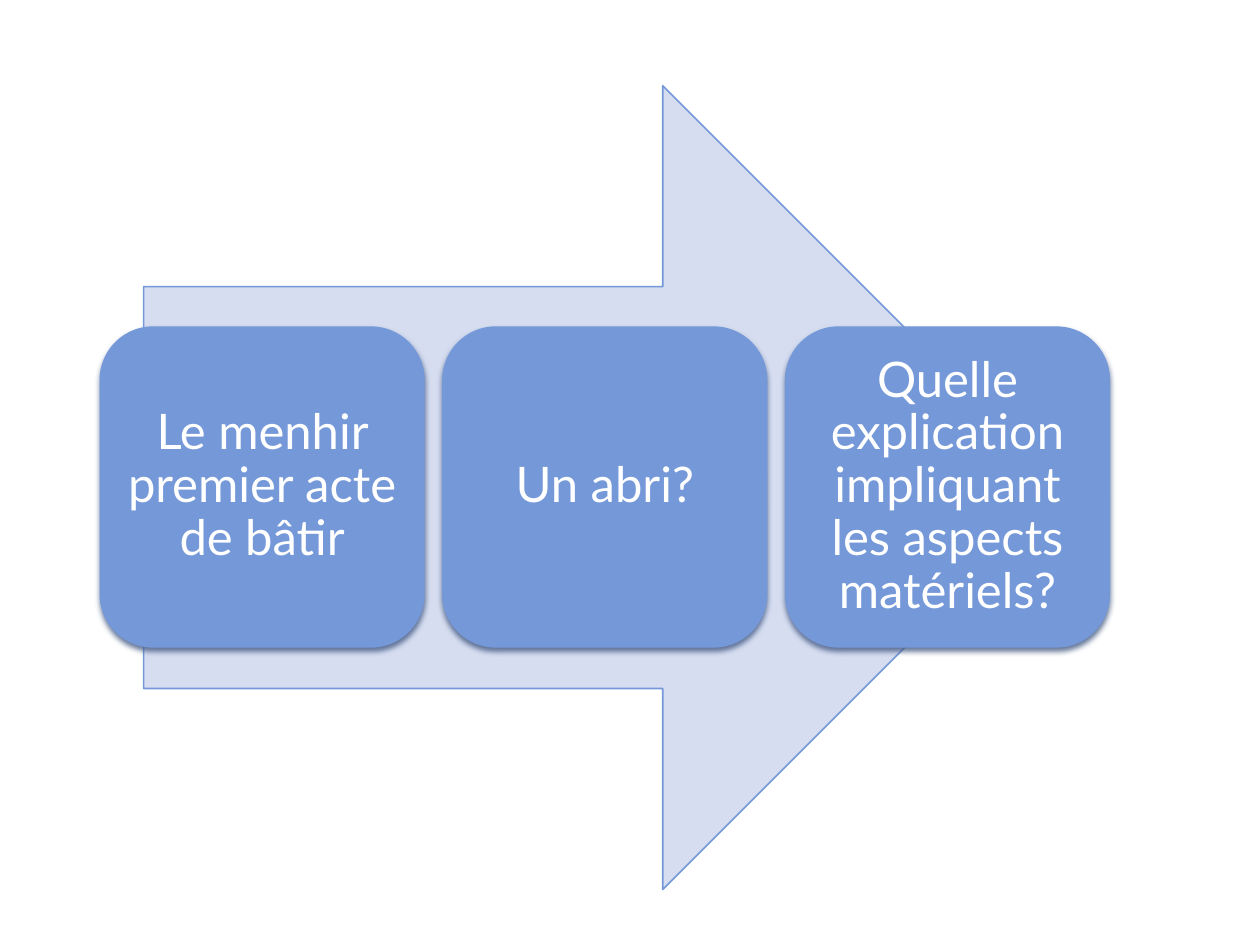
from lxml import etree
from pptx import Presentation
from pptx.dml.color import RGBColor
from pptx.enum.shapes import MSO_SHAPE as Preset
from pptx.enum.text import MSO_ANCHOR, PP_ALIGN
from pptx.oxml.ns import qn
from pptx.util import Inches, Pt

STEPS = [
    "Le menhir premier acte de bâtir",
    "Un abri?",
    "Quelle explication impliquant les aspects matériels?",
]

PALE_BLUE = RGBColor(0xD6, 0xDD, 0xF1)
BLUE = RGBColor(0x75, 0x98, 0xD9)
SHADOW = RGBColor(0x48, 0x5E, 0x86)
WHITE = RGBColor(0xFF, 0xFF, 0xFF)

STEP_LEFT, STEP_TOP = 0.79, 2.59
STEP_WIDTH, STEP_HEIGHT = 2.58, 2.55
STEP_GAP = 0.14


def add_filled(slide, preset, left, top, width, height, color):
    shape = slide.shapes.add_shape(
        preset, Inches(left), Inches(top), Inches(width), Inches(height))
    shape.shadow.inherit = False
    shape.fill.solid()
    shape.fill.fore_color.rgb = color
    return shape


def add_drop_shadow(shape):
    effects = shape._element.spPr.find(qn("a:effectLst"))
    outer = etree.SubElement(
        effects, qn("a:outerShdw"), blurRad=str(Pt(3.1)), dist=str(Pt(2)),
        dir="5400000", rotWithShape="0")
    color = etree.SubElement(outer, qn("a:srgbClr"), val=str(SHADOW))
    etree.SubElement(color, qn("a:alpha"), val="83000")


def add_step(slide, index, wording):
    left = STEP_LEFT + index * (STEP_WIDTH + STEP_GAP)
    step = add_filled(slide, Preset.ROUNDED_RECTANGLE, left, STEP_TOP,
                      STEP_WIDTH, STEP_HEIGHT, BLUE)
    step.line.fill.background()
    add_drop_shadow(step)
    frame = step.text_frame
    frame.word_wrap = True
    frame.vertical_anchor = MSO_ANCHOR.MIDDLE
    frame.margin_left = frame.margin_right = 0
    frame.margin_top = frame.margin_bottom = 0
    frame.text = wording
    paragraph = frame.paragraphs[0]
    paragraph.alignment = PP_ALIGN.CENTER
    paragraph.line_spacing = 0.9
    font = paragraph.runs[0].font
    font.name = "Lato"
    font.size = Pt(28)
    font.color.rgb = WHITE


def main():
    deck = Presentation()
    deck.slide_width, deck.slide_height = Inches(10), Inches(7.5)
    slide = deck.slides.add_slide(deck.slide_layouts[6])
    arrow = add_filled(slide, Preset.RIGHT_ARROW, 1.14, 0.68, 7.31, 6.38, PALE_BLUE)
    arrow.line.color.rgb = BLUE
    arrow.line.width = Pt(0.9)
    for index, wording in enumerate(STEPS):
        add_step(slide, index, wording)
    deck.save("out.pptx")


if __name__ == "__main__":
    main()
